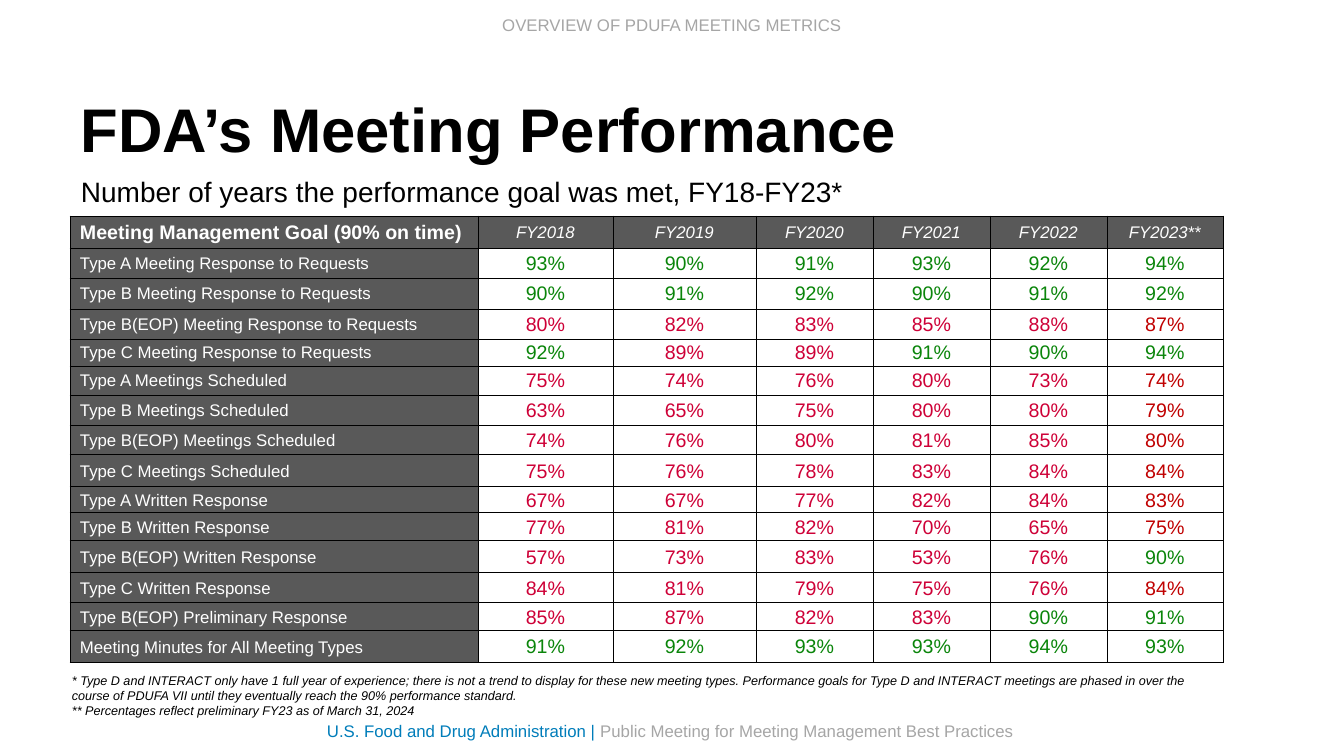
from dataclasses import dataclass

from lxml import etree
from pptx import Presentation
from pptx.dml.color import RGBColor
from pptx.enum.text import MSO_ANCHOR, PP_ALIGN
from pptx.oxml.ns import qn
from pptx.util import Emu, Pt

LEFT, CENTER = PP_ALIGN.LEFT, PP_ALIGN.CENTER
TOP, MIDDLE = MSO_ANCHOR.TOP, MSO_ANCHOR.MIDDLE
GOAL = 90


@dataclass(frozen=True)
class Theme:
    """Colours, font and type sizes of the slide."""
    font: str = "Arial"
    ink: str = "000000"
    paper: str = "FFFFFF"
    muted: str = "A6A6A6"
    brand: str = "007DBA"
    head: str = "595959"
    met: str = "0A850A"
    missed: str = "CE0037"
    late: str = "C00000"
    title: int = 44
    sub: int = 20
    value: int = 14
    label: int = 12
    note: int = 9
    rule: float = 0.5


THEME = Theme()

COLS = [408, 135, 143, 117, 117, 117, 116]
ROWS = [32, 30, 31, 30, 27, 29, 30, 30, 32, 26, 28, 32, 30, 28, 32]
HEADS = ["Meeting Management Goal (90% on time)", "FY2018", "FY2019",
         "FY2020", "FY2021", "FY2022", "FY2023**"]
RATES = [
    ("Type A Meeting Response to Requests", 93, 90, 91, 93, 92, 94),
    ("Type B Meeting Response to Requests", 90, 91, 92, 90, 91, 92),
    ("Type B(EOP) Meeting Response to Requests", 80, 82, 83, 85, 88, 87),
    ("Type C Meeting Response to Requests", 92, 89, 89, 91, 90, 94),
    ("Type A Meetings Scheduled", 75, 74, 76, 80, 73, 74),
    ("Type B Meetings Scheduled", 63, 65, 75, 80, 80, 79),
    ("Type B(EOP) Meetings Scheduled", 74, 76, 80, 81, 85, 80),
    ("Type C Meetings Scheduled", 75, 76, 78, 83, 84, 84),
    ("Type A Written Response", 67, 67, 77, 82, 84, 83),
    ("Type B Written Response", 77, 81, 82, 70, 65, 75),
    ("Type B(EOP) Written Response", 57, 73, 83, 53, 76, 90),
    ("Type C Written Response", 84, 81, 79, 75, 76, 84),
    ("Type B(EOP) Preliminary Response", 85, 87, 82, 83, 90, 91),
    ("Meeting Minutes for All Meeting Types", 91, 92, 93, 93, 94, 93),
]
NOTES = [
    "* Type D and INTERACT only have 1 full year of experience; there is not "
    "a trend to display for these new meeting types. Performance goals for "
    "Type D and INTERACT meetings are phased in over the course of PDUFA VII "
    "until they eventually reach the 90% performance standard.",
    "** Percentages reflect preliminary FY23 as of March 31, 2024",
]


def px(count):
    """Turn pixels into EMU."""
    return Emu(round(count * 914400 / 100.8))


def style(para, size, color, align=LEFT, bold=False, italic=False):
    """Set the font and alignment of a paragraph."""
    para.alignment = align
    font = para.font
    font.name, font.size = THEME.font, Pt(size)
    font.bold, font.italic = bold, italic
    font.color.rgb = RGBColor.from_string(color)


def add_text(slide, box, lines, size, color, anchor=TOP, **look):
    """Place a wrapped text box with one paragraph per line."""
    frame = slide.shapes.add_textbox(*map(px, box)).text_frame
    frame.word_wrap = True
    frame.vertical_anchor = anchor
    frame.text = "\n".join(lines)
    for para in frame.paragraphs:
        style(para, size, color, **look)
    return frame


def add_head(slide, box):
    """Place the running head, title and subtitle."""
    left, top, width, height = box
    add_text(slide, (left + 344, top, 514, 30),
             ["OVERVIEW OF PDUFA MEETING METRICS"],
             THEME.label, THEME.muted, align=CENTER)
    title = add_text(slide, (left, top + 50, width - 18, 146),
                     ["FDA’s Meeting Performance"],
                     THEME.title, THEME.ink, MIDDLE, bold=True)
    title.paragraphs[0].line_spacing = 0.9
    add_text(slide, (left, top + height - 44, width, 44),
             ["Number of years the performance goal was met, FY18-FY23*"],
             THEME.sub, THEME.ink)


def add_rules(cell):
    """Draw a thin line on all four sides of a cell."""
    props = cell._tc.get_or_add_tcPr()
    for side in ("a:lnL", "a:lnR", "a:lnT", "a:lnB"):
        line = etree.SubElement(props, qn(side), w=str(Pt(THEME.rule)))
        fill = etree.SubElement(line, qn("a:solidFill"))
        etree.SubElement(fill, qn("a:srgbClr"), val=THEME.ink)


def fill_cell(cell, text, fill, inset, size, color, **look):
    """Fill one cell with its text, colour and borders."""
    add_rules(cell)
    cell.fill.solid()
    cell.fill.fore_color.rgb = RGBColor.from_string(fill)
    cell.vertical_anchor = MIDDLE
    cell.margin_left, cell.margin_right = px(inset), px(1)
    cell.margin_top, cell.margin_bottom = px(1), px(0)
    cell.text = text
    style(cell.text_frame.paragraphs[0], size, color, **look)


def shade(rate, last):
    """Pick the colour of a rate by whether it met the goal."""
    if rate >= GOAL:
        return THEME.met
    return THEME.late if last else THEME.missed


def add_rates(slide, box):
    """Place the table of yearly rates."""
    frame = slide.shapes.add_table(len(ROWS), len(COLS), *map(px, box))
    table = frame.table
    table.first_row = table.horz_banding = False
    for col, width in zip(table.columns, COLS):
        col.width = px(width)
    for row, height in zip(table.rows, ROWS):
        row.height = px(height)
    for c, head in enumerate(HEADS):
        if c == 0:
            fill_cell(table.cell(0, c), head, THEME.head, 10,
                      THEME.value, THEME.paper, bold=True)
        else:
            fill_cell(table.cell(0, c), head, THEME.head, 1,
                      THEME.label, THEME.paper, align=CENTER, italic=True)
    for r, (goal, *rates) in enumerate(RATES, 1):
        fill_cell(table.cell(r, 0), goal, THEME.head, 10,
                  THEME.label, THEME.paper)
        for c, rate in enumerate(rates, 1):
            fill_cell(table.cell(r, c), f"{rate}%", THEME.paper, 1,
                      THEME.value, shade(rate, c == len(rates)),
                      align=CENTER)


def add_foot(slide, box):
    """Place the footnotes and the footer line."""
    left, top, width, height = box
    add_text(slide, (left, top, width, 56), NOTES,
             THEME.note, THEME.ink, italic=True)
    frame = add_text(slide, (left + 255, top + height - 30, 712, 30),
                     ["U.S. Food and Drug Administration | "],
                     THEME.label, THEME.brand)
    run = frame.paragraphs[0].add_run()
    run.text = "Public Meeting for Meeting Management Best Practices"
    run.font.color.rgb = RGBColor.from_string(THEME.muted)


def main():
    """Build the slide and save it."""
    deck = Presentation()
    deck.slide_width, deck.slide_height = px(1344), px(756)
    slide = deck.slides.add_slide(deck.slide_layouts[6])
    add_head(slide, (71, 10, 1113, 204))
    add_rates(slide, (70, 216, sum(COLS), sum(ROWS)))
    add_foot(slide, (62, 668, 1154, 78))
    deck.save("out.pptx")


if __name__ == "__main__":
    main()
